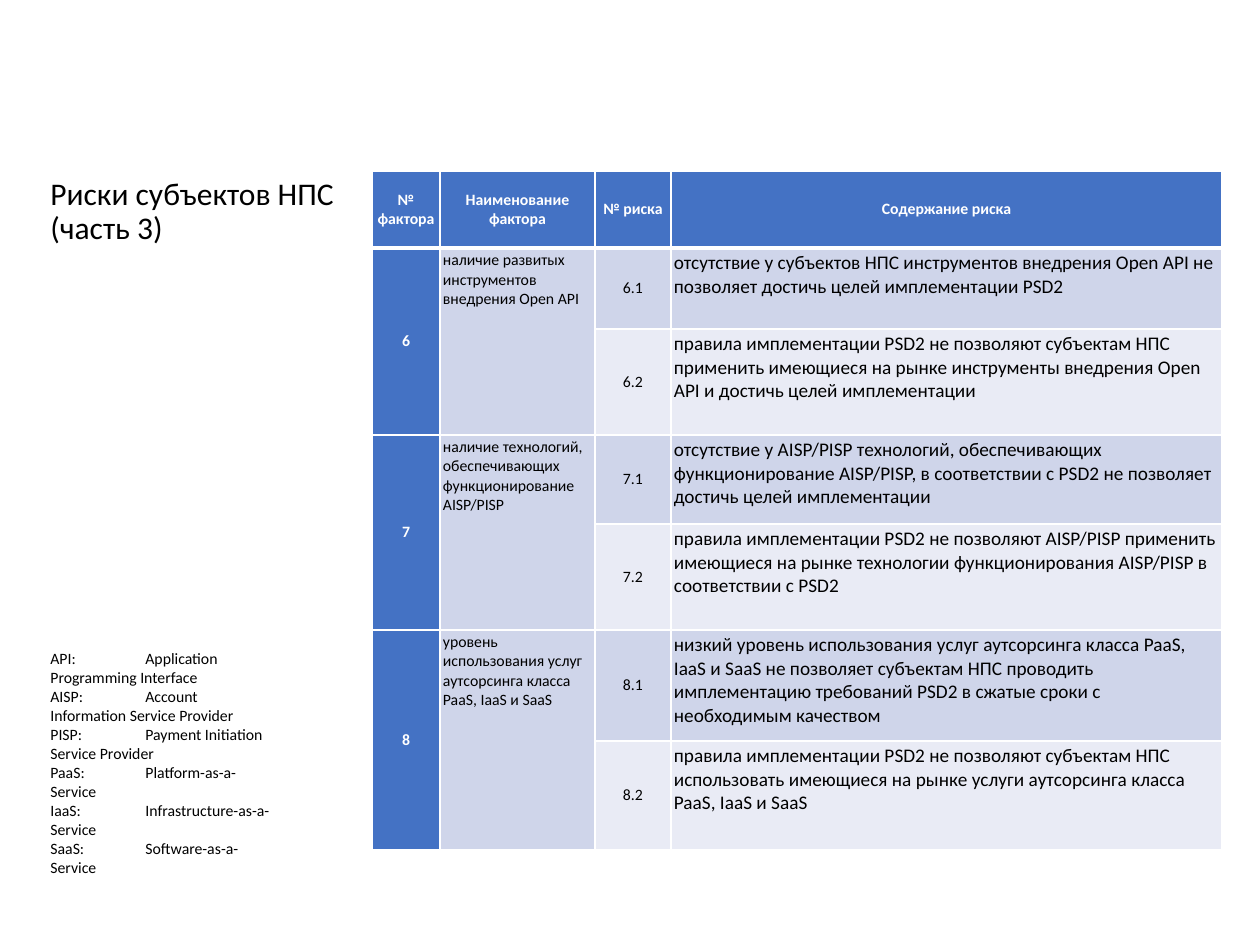
from pptx import Presentation
from pptx.dml.color import RGBColor
from pptx.enum.text import MSO_ANCHOR, PP_ALIGN
from pptx.oxml import parse_xml
from pptx.oxml.ns import nsdecls
from pptx.util import Emu, Pt

PX = 914400 / 126
TOP, MIDDLE = MSO_ANCHOR.TOP, MSO_ANCHOR.MIDDLE
LEFT, CENTER = PP_ALIGN.LEFT, PP_ALIGN.CENTER
BLACK, WHITE, BLUE = "000000", "FFFFFF", "4472C4"
BANDS = ("CFD5EA", "E9EBF5")

COLS = (68, 155, 76, 551)
ROWS = (77, 81, 106, 89, 106, 111, 109)
HEADERS = ("№ фактора", "Наименование фактора", "№ риска", "Содержание риска")
FACTORS = (
    ("6", "наличие развитых инструментов внедрения Open API", (
        "отсутствие у субъектов НПС инструментов внедрения Open API не позволяет достичь целей имплементации PSD2",
        "правила имплементации PSD2 не позволяют субъектам НПС применить имеющиеся на рынке инструменты внедрения "
        "Open API и достичь целей имплементации")),
    ("7", "наличие технологий, обеспечивающих функционирование AISP/PISP", (
        "отсутствие у AISP/PISP технологий, обеспечивающих функционирование AISP/PISP, в соответствии с PSD2 "
        "не позволяет достичь целей имплементации",
        "правила имплементации PSD2 не позволяют AISP/PISP применить имеющиеся на рынке технологии "
        "функционирования AISP/PISP в соответствии с PSD2")),
    ("8", "уровень использования услуг аутсорсинга класса PaaS, IaaS и SaaS", (
        "низкий уровень использования услуг аутсорсинга класса PaaS, IaaS и SaaS не позволяет субъектам НПС "
        "проводить имплементацию требований PSD2 в сжатые сроки с необходимым качеством",
        "правила имплементации PSD2 не позволяют субъектам НПС использовать имеющиеся на рынке услуги "
        "аутсорсинга класса PaaS, IaaS и SaaS")),
)
TERMS = (
    ("API:", "Application Programming Interface"),
    ("AISP:", "Account Information Service Provider"),
    ("PISP:", "Payment Initiation Service Provider"),
    ("PaaS:", "Platform-as-a-Service"),
    ("IaaS:", "Infrastructure-as-a-Service"),
    ("SaaS:", "Software-as-a-Service"),
)


def px(n):
    return Emu(round(n * PX))


def rgb(color):
    return RGBColor.from_string(color)


class SlideBuilder:
    """Holds the slide and its text style, and adds each kind of element."""

    def __init__(self, slide, font="Calibri"):
        self.s = slide
        self.font = font

    def style(self, p, size, color=BLACK, bold=False, align=LEFT):
        p.alignment = align
        f = p.font
        f.name, f.size, f.bold = self.font, Pt(size), bold
        f.color.rgb = rgb(color)

    def text(self, x, y, w, h, lines, size, anchor=TOP, spacing=None, tab=None):
        tf = self.s.shapes.add_textbox(px(x), px(y), px(w), px(h)).text_frame
        tf.word_wrap = True
        tf.vertical_anchor = anchor
        tf.text = "\n".join(lines)
        for p in tf.paragraphs:
            self.style(p, size)
            p.line_spacing = spacing
            if tab:
                stops = parse_xml(f'<a:tabLst {nsdecls("a")}><a:tab pos="{px(tab)}" algn="l"/></a:tabLst>')
                p.font._element.addprevious(stops)

    def table(self, x, y, cols, rows):
        shape = self.s.shapes.add_table(len(rows), len(cols), px(x), px(y), px(sum(cols)), px(sum(rows)))
        table = shape.table
        for col, w in zip(table.columns, cols):
            col.width = px(w)
        for row, h in zip(table.rows, rows):
            row.height = px(h)
        return table

    def borders(self, cell, top=1, bottom=1):
        tc_pr = cell._tc.get_or_add_tcPr()
        for i, (side, width) in enumerate((("L", 1), ("R", 1), ("T", top), ("B", bottom))):
            tc_pr.insert(i, parse_xml(
                f'<a:ln{side} {nsdecls("a")} w="{Pt(width)}"><a:solidFill>'
                f'<a:srgbClr val="{WHITE}"/></a:solidFill></a:ln{side}>'))

    def cell(self, cell, text, fill, size=9, color=BLACK, bold=False, align=LEFT, anchor=TOP):
        cell.margin_left = cell.margin_right = cell.margin_top = cell.margin_bottom = px(3)
        cell.vertical_anchor = anchor
        cell.fill.solid()
        cell.fill.fore_color.rgb = rgb(fill)
        cell.text = text
        self.style(cell.text_frame.paragraphs[0], size, color, bold, align)


def main():
    prs = Presentation()
    prs.slide_width, prs.slide_height = px(1260), px(945)
    b = SlideBuilder(prs.slides.add_slide(prs.slide_layouts[6]))

    b.text(38, 156, 999, 112, ["Риски субъектов НПС\v(часть 3)"], 18, MIDDLE, spacing=0.9)

    table = b.table(372, 171, COLS, ROWS)
    centered = {"align": CENTER, "anchor": MIDDLE}
    heading = {"fill": BLUE, "color": WHITE, "bold": True, **centered}
    for r in range(len(ROWS)):
        for c in range(len(COLS)):
            b.borders(table.cell(r, c), top=3 if r == 1 else 1, bottom=3 if r == 0 else 1)
    for c, title in enumerate(HEADERS):
        b.cell(table.cell(0, c), title, **heading)
    for i, (number, factor, risks) in enumerate(FACTORS):
        first = 1 + 2 * i
        for c in (0, 1):
            table.cell(first, c).merge(table.cell(first + 1, c))
        b.cell(table.cell(first, 0), number, **heading)
        b.cell(table.cell(first, 1), factor, BANDS[0])
        for j, (risk, band) in enumerate(zip(risks, BANDS)):
            b.cell(table.cell(first + j, 2), f"{number}.{j + 1}", band, **centered)
            b.cell(table.cell(first + j, 3), risk, band, size=11)

    b.text(38, 643, 244, 242, [f"{short}\t{full}" for short, full in TERMS], 9, tab=95)
    prs.save("out.pptx")


if __name__ == "__main__":
    main()
